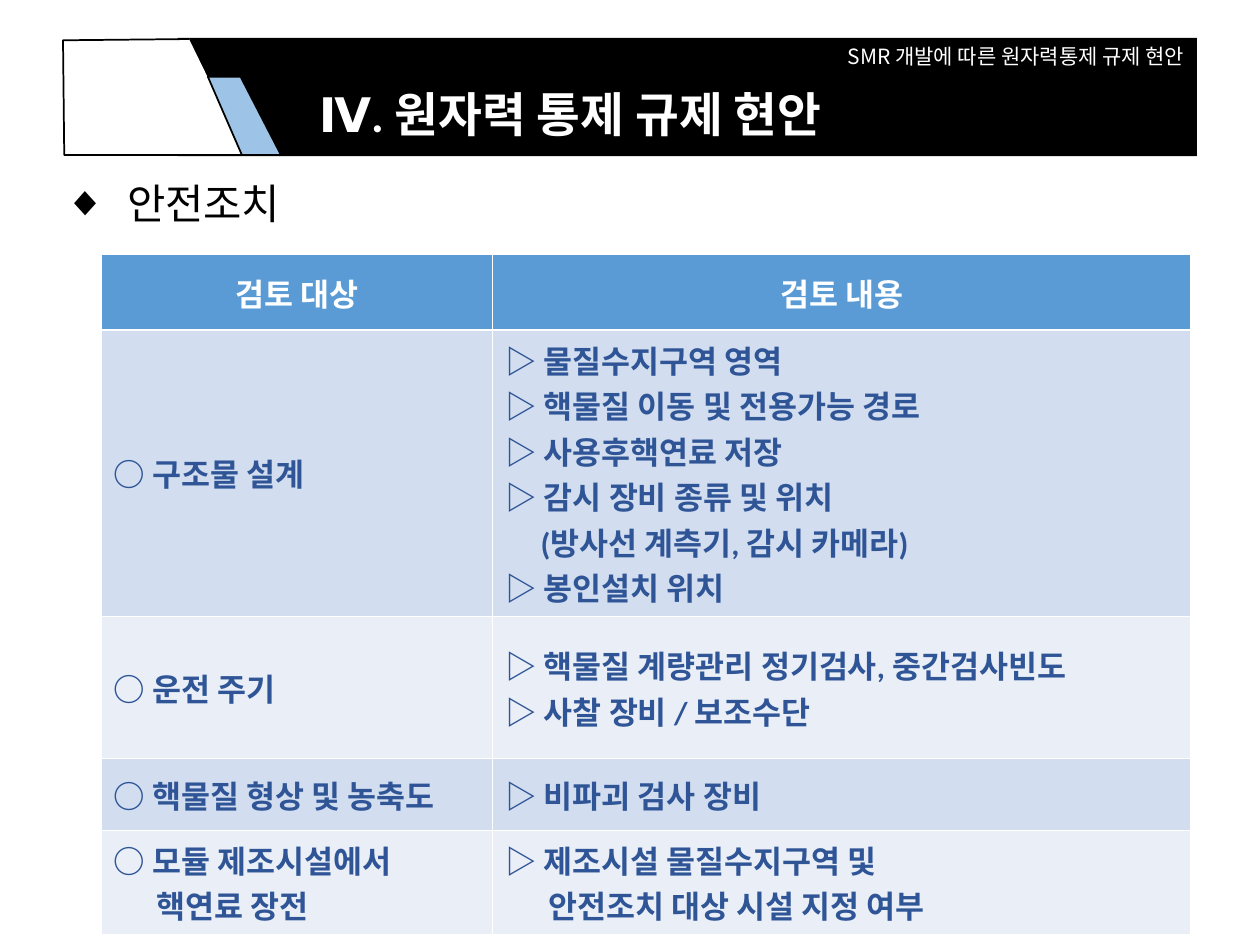
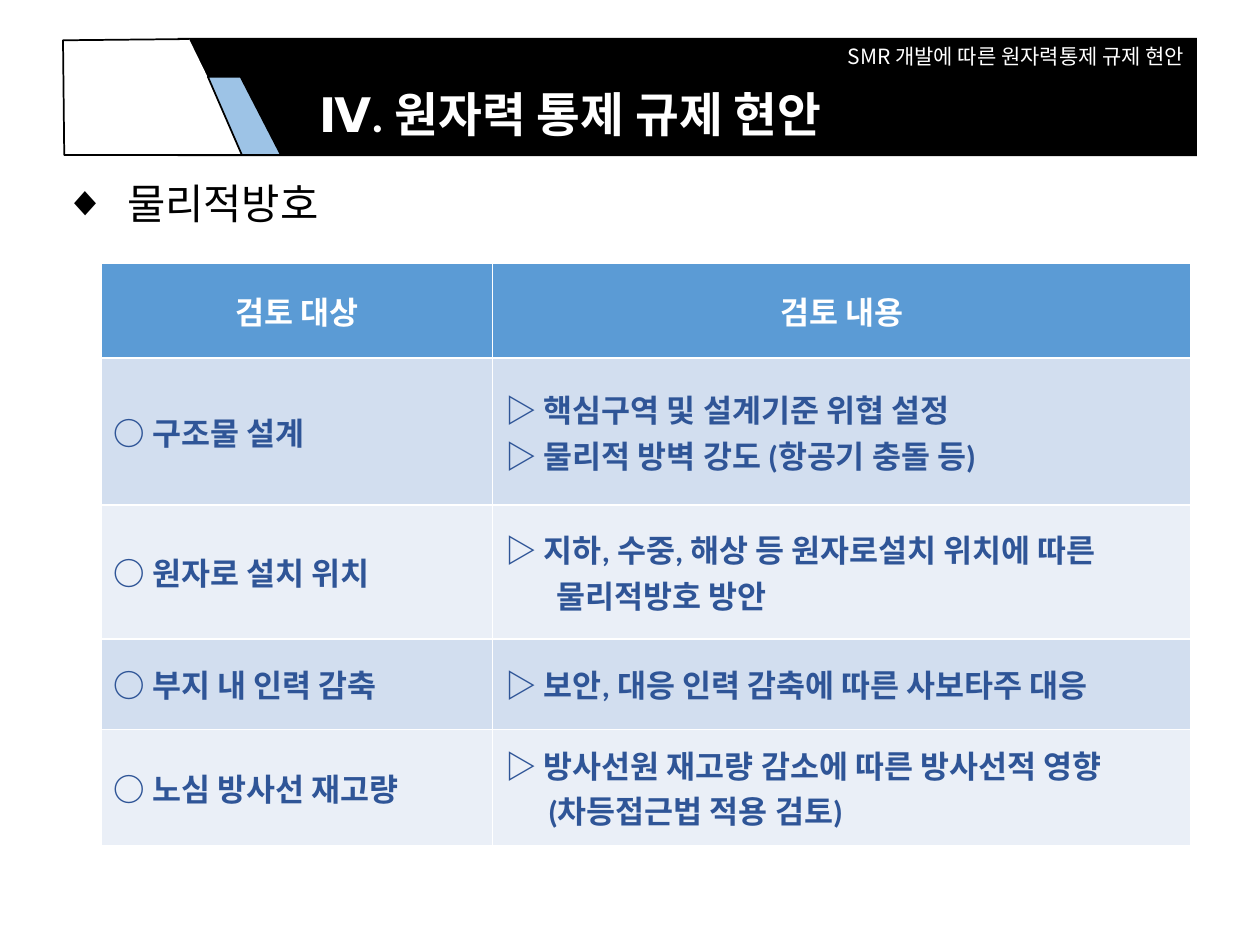
from dataclasses import dataclass

from lxml import etree
from pptx import Presentation
from pptx.dml.color import RGBColor
from pptx.enum.shapes import MSO_SHAPE
from pptx.enum.text import MSO_ANCHOR, MSO_AUTO_SIZE, PP_ALIGN
from pptx.oxml.ns import qn
from pptx.util import Inches, Pt

RECTANGLE = MSO_SHAPE.RECTANGLE
TOP, MIDDLE = MSO_ANCHOR.TOP, MSO_ANCHOR.MIDDLE
LEFT, CENTER, RIGHT = PP_ALIGN.LEFT, PP_ALIGN.CENTER, PP_ALIGN.RIGHT

SLIDE_WIDTH, SLIDE_HEIGHT = Inches(10), Inches(7.5)
COLUMN, ROW = SLIDE_WIDTH / 100, SLIDE_HEIGHT / 75

LATIN_FONT, KOREAN_FONT = "Calibri", "Noto Sans CJK KR"
BLACK, WHITE = "000000", "FFFFFF"
ACCENT, HEADER_FILL, TABLE_TEXT = "9DC3E6", "5B9BD5", "2F5597"
ROW_FILLS = ("D2DEEF", "EAEFF7")

DECK_NAME = "SMR 개발에 따른 원자력통제 규제 현안"
CHAPTER = "Ⅳ. 원자력 통제 규제 현안"
TABLE_HEADER = ("검토 대상", "검토 내용")
TABLE_LEFT = 8
TABLE_COLUMNS = (31.1, 55.4)


@dataclass(frozen=True)
class Area:
    """A rectangle in grid columns and rows."""
    left: float
    top: float
    width: float
    height: float

    def lengths(self) -> tuple[int, int, int, int]:
        return (round(self.left * COLUMN), round(self.top * ROW),
                round(self.width * COLUMN), round(self.height * ROW))


@dataclass(frozen=True)
class Outline:
    points: tuple[tuple[float, float], ...]
    fill: str
    closed: bool


@dataclass(frozen=True)
class Line:
    """A cell paragraph, indented by a number of grid columns."""
    text: str
    indent: float = 0


@dataclass(frozen=True)
class ReviewRow:
    height: float
    target: tuple[Line, ...]
    content: tuple[Line, ...]


@dataclass(frozen=True)
class ReviewSlide:
    heading: str
    table_top: float
    header_height: float
    rows: tuple[ReviewRow, ...]


BAND = Area(14.1, 3, 80.9, 9.4)
TITLE = Area(24.3, 6.2, 68.4, 4.8)
HEADING = Area(4.1, 13.4, 91.9, 5)
BAND_OUTLINES = (
    Outline(((15, 3.1), (5, 3.2), (5.1, 12.3), (19.5, 12.3)), WHITE, False),
    Outline(((16.5, 6.1), (19.1, 6.1), (22.3, 12.3), (19.2, 12.3)), ACCENT, True),
)

REVIEW_SLIDES = (
    ReviewSlide("안전조치", 20.2, 6, (
        ReviewRow(19.8, (Line("○ 구조물 설계"),), (
            Line("▷ 물질수지구역 영역"),
            Line("▷ 핵물질 이동 및 전용가능 경로"),
            Line("▷ 사용후핵연료 저장"),
            Line("▷ 감시 장비 종류 및 위치"),
            Line("(방사선 계측기, 감시 카메라)", 2.8),
            Line("▷ 봉인설치 위치"))),
        ReviewRow(11.3, (Line("○ 운전 주기"),), (
            Line("▷ 핵물질 계량관리 정기검사, 중간검사빈도"),
            Line("▷ 사찰 장비 / 보조수단"))),
        ReviewRow(5.7, (Line("○ 핵물질 형상 및 농축도"),),
                  (Line("▷ 비파괴 검사 장비"),)),
        ReviewRow(7.3, (Line("○ 모듈 제조시설에서"), Line("핵연료 장전", 3.4)), (
            Line("▷ 제조시설 물질수지구역 및"),
            Line("안전조치 대상 시설 지정 여부", 3.4))),
    )),
    ReviewSlide("물리적방호", 20.9, 7.5, (
        ReviewRow(11.7, (Line("○ 구조물 설계"),), (
            Line("▷ 핵심구역 및 설계기준 위협 설정"),
            Line("▷ 물리적 방벽 강도 (항공기 충돌 등)"))),
        ReviewRow(10.6, (Line("○ 원자로 설치 위치"),), (
            Line("▷ 지하, 수중, 해상 등 원자로설치 위치에 따른"),
            Line("물리적방호 방안", 4.1))),
        ReviewRow(7.2, (Line("○ 부지 내 인력 감축"),),
                  (Line("▷ 보안, 대응 인력 감축에 따른 사보타주 대응"),)),
        ReviewRow(9.2, (Line("○ 노심 방사선 재고량"),), (
            Line("▷ 방사선원 재고량 감소에 따른 방사선적 영향"),
            Line("(차등접근법 적용 검토)", 3.4))),
    )),
)


def color(hex_code: str) -> RGBColor:
    return RGBColor.from_string(hex_code)


def set_fill(target, hex_code: str) -> None:
    target.fill.solid()
    target.fill.fore_color.rgb = color(hex_code)


def set_indent(paragraph, left: float, first: float = 0) -> None:
    properties = paragraph._p.get_or_add_pPr()
    properties.set("marL", str(round(left * COLUMN)))
    properties.set("indent", str(round(first * COLUMN)))


def write(paragraph, text: str, *, size: float, hex_code: str, bold: bool = False,
          font: str = LATIN_FONT, align=LEFT) -> None:
    paragraph.alignment = align
    paragraph.space_before = Pt(0)
    run = paragraph.add_run()
    run.text = text
    run.font.name = font
    run.font.size = Pt(size)
    run.font.bold = bold
    run.font.color.rgb = color(hex_code)
    east_asian = etree.SubElement(run.font._element, qn("a:ea"))
    east_asian.set("typeface", KOREAN_FONT)


def place(shape, area: Area, anchor) -> None:
    shape.left, shape.top, shape.width, shape.height = area.lengths()
    frame = shape.text_frame
    frame.word_wrap = True
    frame.auto_size = MSO_AUTO_SIZE.NONE
    frame.vertical_anchor = anchor


def add_band(slide) -> None:
    band = slide.shapes.add_shape(RECTANGLE, *BAND.lengths())
    band.shadow.inherit = False
    set_fill(band, BLACK)
    band.line.fill.background()
    band.text_frame.vertical_anchor = TOP
    write(band.text_frame.paragraphs[0], DECK_NAME, size=12, hex_code=WHITE,
          font=KOREAN_FONT, align=RIGHT)
    for outline in BAND_OUTLINES:
        points = [(x * COLUMN, y * ROW) for x, y in outline.points]
        builder = slide.shapes.build_freeform(*points[0])
        builder.add_line_segments(points[1:], close=outline.closed)
        shape = builder.convert_to_shape()
        shape.shadow.inherit = False
        set_fill(shape, outline.fill)
        shape.line.color.rgb = color(BLACK)
        shape.line.width = Pt(1)


def fill_title(slide) -> None:
    """Write the chapter title and bring it in front of the band."""
    title = slide.shapes.title
    place(title, TITLE, TOP)
    write(title.text_frame.paragraphs[0], CHAPTER, size=27.2, hex_code=WHITE, bold=True)
    title.element.getparent().append(title.element)


def fill_heading(slide, text: str) -> None:
    body = slide.placeholders[1]
    place(body, HEADING, MIDDLE)
    paragraph = body.text_frame.paragraphs[0]
    set_indent(paragraph, 5, -5)
    paragraph.line_spacing = 1.1
    bullet = etree.SubElement(paragraph._p.get_or_add_pPr(), qn("a:buChar"))
    bullet.set("char", "◆")
    write(paragraph, text, size=23.8, hex_code=BLACK, font=KOREAN_FONT)


def fill_cell(cell, lines: tuple[Line, ...], *, fill: str, hex_code: str, align=LEFT) -> None:
    set_fill(cell, fill)
    cell.vertical_anchor = MIDDLE
    for index, line in enumerate(lines):
        frame = cell.text_frame
        paragraph = frame.add_paragraph() if index else frame.paragraphs[0]
        if line.indent:
            set_indent(paragraph, line.indent)
        write(paragraph, line.text, size=18, hex_code=hex_code, bold=True, align=align)


def add_review_table(slide, review: ReviewSlide) -> None:
    heights = [review.header_height, *(row.height for row in review.rows)]
    area = Area(TABLE_LEFT, review.table_top, sum(TABLE_COLUMNS), sum(heights))
    table = slide.shapes.add_table(len(heights), len(TABLE_COLUMNS), *area.lengths()).table
    for column, width in zip(table.columns, TABLE_COLUMNS):
        column.width = round(width * COLUMN)
    for row, height in zip(table.rows, heights):
        row.height = round(height * ROW)
    for index, label in enumerate(TABLE_HEADER):
        fill_cell(table.cell(0, index), (Line(label),), fill=HEADER_FILL,
                  hex_code=WHITE, align=CENTER)
    for number, row in enumerate(review.rows):
        for index, lines in enumerate((row.target, row.content)):
            fill_cell(table.cell(number + 1, index), lines,
                      fill=ROW_FILLS[number % 2], hex_code=TABLE_TEXT)


def main() -> None:
    presentation = Presentation()
    presentation.slide_width, presentation.slide_height = SLIDE_WIDTH, SLIDE_HEIGHT
    title_and_body = presentation.slide_layouts[1]
    for review in REVIEW_SLIDES:
        slide = presentation.slides.add_slide(title_and_body)
        add_band(slide)
        fill_title(slide)
        fill_heading(slide, review.heading)
        add_review_table(slide, review)
    presentation.save("out.pptx")


if __name__ == "__main__":
    main()
